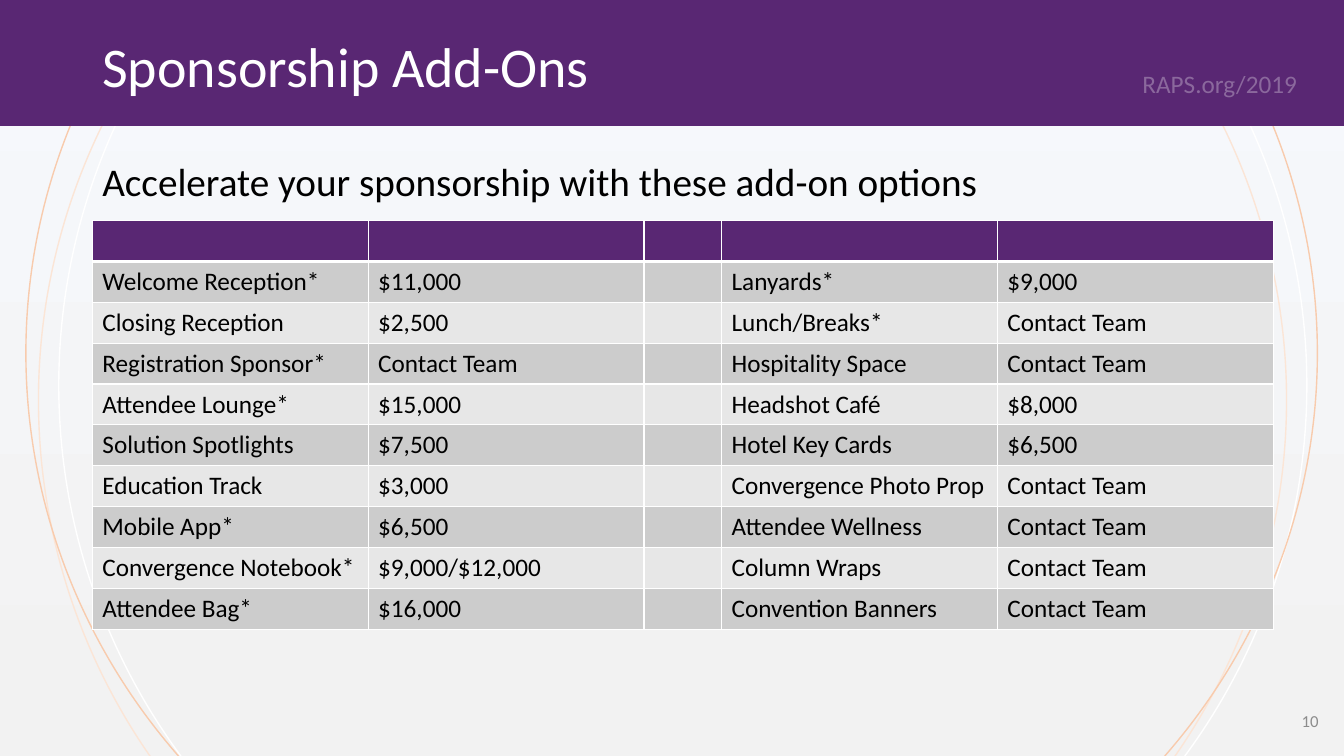
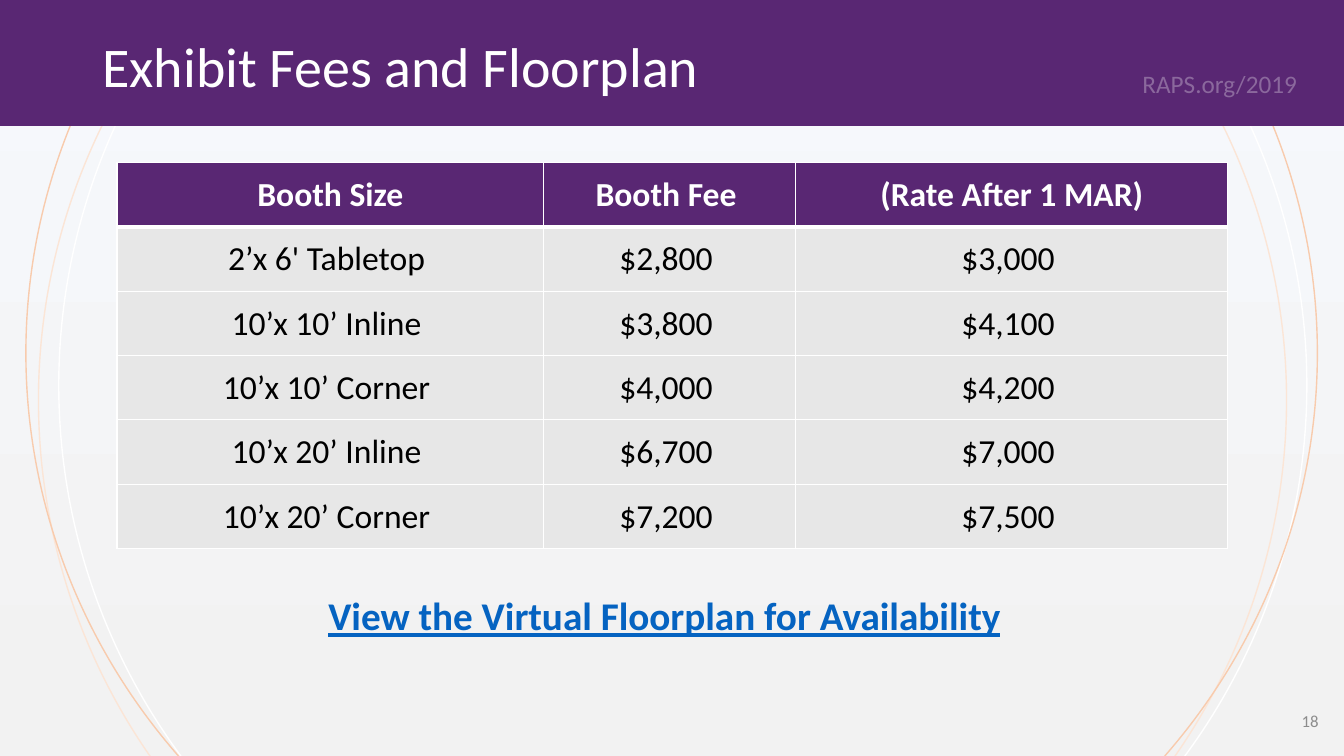
from lxml import etree
from pptx import Presentation
from pptx.dml.color import RGBColor
from pptx.enum import shapes, text
from pptx.oxml import ns
from pptx.util import Pt

FONT = "Calibri"
PURPLE, WHITE, BLACK = "592773", "FFFFFF", "000000"
LIGHT_GRAY, MID_GRAY = "E7E7E7", "CCCCCC"
PAGE_GRAY, LINK_BLUE = "8C8C8C", "0563C1"
SLIDE_WIDTH, SLIDE_HEIGHT, BAND_HEIGHT = 960, 540, 90
LEFT, CENTER, RIGHT = text.PP_ALIGN.LEFT, text.PP_ALIGN.CENTER, text.PP_ALIGN.RIGHT
TOP, MIDDLE = text.MSO_ANCHOR.TOP, text.MSO_ANCHOR.MIDDLE

RINGS = [
    ((42, -170.5, 891.5, 891.5), WHITE),
    ((27.5, -160, 891.5, 891.5), "FBE5D6"),
    ((18.5, -193.5, 922.5, 891.5), "F8CBAD"),
]

ADD_ONS = [
    ("", "", "", "", ""),
    ("Welcome Reception*", "$11,000", "", "Lanyards*", "$9,000"),
    ("Closing Reception", "$2,500", "", "Lunch/Breaks*", "Contact Team"),
    ("Registration Sponsor*", "Contact Team", "", "Hospitality Space", "Contact Team"),
    ("Attendee Lounge*", "$15,000", "", "Headshot Café", "$8,000"),
    ("Solution Spotlights", "$7,500", "", "Hotel Key Cards", "$6,500"),
    ("Education Track", "$3,000", "", "Convergence Photo Prop", "Contact Team"),
    ("Mobile App*", "$6,500", "", "Attendee Wellness", "Contact Team"),
    ("Convergence Notebook*", "$9,000/$12,000", "", "Column Wraps", "Contact Team"),
    ("Attendee Bag*", "$16,000", "", "Convention Banners", "Contact Team"),
]
BOOTH_FEES = [
    ("Booth Size", "Booth Fee ", "(Rate After 1 MAR)"),
    ("2’x 6' Tabletop ", "$2,800 ", "$3,000 "),
    ("10’x 10’ Inline ", "$3,800 ", "$4,100 "),
    ("10’x 10’ Corner ", "$4,000 ", "$4,200 "),
    ("10’x 20’ Inline ", "$6,700 ", "$7,000 "),
    ("10’x 20’ Corner ", "$7,200 ", "$7,500 "),
]

SLIDES = [
    {
        "title": "Sponsorship Add-Ons", "page": "10", "rows": ADD_ONS,
        "origin": (66, 157.5), "columns": (197, 197, 55.5, 197, 197), "row_height": 29.2,
        "bands": (LIGHT_GRAY, MID_GRAY), "size": 18, "align": LEFT, "anchor": TOP,
        "margins": (7.2, 3.6, 7.2, 3.6),
        "message": "Accelerate your sponsorship with these add-on options",
        "message_box": (66, 112.5, 796, 38), "message_color": BLACK,
        "message_align": LEFT, "message_spacing": 0.9, "message_is_link": False,
    },
    {
        "title": "Exhibit Fees and Floorplan", "page": "18", "rows": BOOTH_FEES,
        "origin": (83.5, 116), "columns": (305, 180, 308.5), "row_height": 46,
        "bands": (LIGHT_GRAY, LIGHT_GRAY), "size": 24, "align": CENTER, "anchor": MIDDLE,
        "margins": (0.72, 0.72, 0.72, 0),
        "message": "View the Virtual Floorplan for Availability",
        "message_box": (216.5, 419, 516, 41), "message_color": LINK_BLUE,
        "message_align": CENTER, "message_spacing": 1, "message_is_link": True,
    },
]


def style_text(frame, value, size, color, align, bold=False):
    """Write one paragraph and return its font, or None when it is empty."""
    frame.text = value
    paragraph = frame.paragraphs[0]
    paragraph.alignment = align
    for run in paragraph.runs:
        run.font.name = FONT
        run.font.size = Pt(size)
        run.font.bold = bold
        run.font.color.rgb = RGBColor.from_string(color)
        return run.font


def add_label(slide, box, value, size, color, align=LEFT, anchor=TOP, bold=False, spacing=1):
    frame = slide.shapes.add_textbox(*map(Pt, box)).text_frame
    frame.word_wrap = True
    frame.vertical_anchor = anchor
    font = style_text(frame, value, size, color, align, bold)
    frame.paragraphs[0].line_spacing = spacing
    return font


presentation = Presentation()
presentation.slide_width = Pt(SLIDE_WIDTH)
presentation.slide_height = Pt(SLIDE_HEIGHT)

for content in SLIDES:
    slide = presentation.slides.add_slide(presentation.slide_layouts[6])

    # Shared background, rings and title band
    background = slide.background.fill
    background.gradient()
    background.gradient_angle = 270
    for stop, color in zip(background.gradient_stops, ("F6F8FC", "F2F2F2")):
        stop.color.rgb = RGBColor.from_string(color)

    for box, color in RINGS:
        ring = slide.shapes.add_shape(shapes.MSO_SHAPE.OVAL, *map(Pt, box))
        ring.shadow.inherit = False
        ring.fill.background()
        ring.line.color.rgb = RGBColor.from_string(color)
        ring.line.width = Pt(1)

    band = slide.shapes.add_shape(
        shapes.MSO_SHAPE.RECTANGLE, 0, 0, Pt(SLIDE_WIDTH), Pt(BAND_HEIGHT))
    band.shadow.inherit = False
    band.fill.solid()
    band.fill.fore_color.rgb = RGBColor.from_string(PURPLE)
    band.line.fill.background()

    address_font = add_label(slide, (733.5, 45.5, 200, 29), "RAPS.org/2019", 18, WHITE, RIGHT)
    address_color = address_font.fill._xPr.find(".//" + ns.qn("a:srgbClr"))
    etree.SubElement(address_color, ns.qn("a:alpha"), val="30000")

    add_label(slide, (66, 22.5, 828, 54.5), content["title"], 40, WHITE,
              anchor=MIDDLE, spacing=0.9)
    add_label(slide, (733, 500.5, 216, 29), content["page"], 12, PAGE_GRAY, RIGHT, MIDDLE)

    # Message above or below the table
    message_font = add_label(
        slide, content["message_box"], content["message"], 28, content["message_color"],
        content["message_align"], bold=content["message_is_link"],
        spacing=content["message_spacing"])
    message_font.underline = content["message_is_link"]

    # Price table
    rows, columns = content["rows"], content["columns"]
    table = slide.shapes.add_table(
        len(rows), len(columns), *map(Pt, content["origin"]),
        Pt(sum(columns)), Pt(content["row_height"] * len(rows))).table
    for column, width in zip(table.columns, columns):
        column.width = Pt(width)

    for row_index, values in enumerate(rows):
        table.rows[row_index].height = Pt(content["row_height"])
        is_header = row_index == 0
        fill_color = PURPLE if is_header else content["bands"][row_index % 2]
        border_widths = {
            "lnL": 1, "lnR": 1,
            "lnT": 3 if row_index == 1 else 1,
            "lnB": 3 if is_header else 1,
        }
        for column_index, value in enumerate(values):
            cell = table.cell(row_index, column_index)
            style_text(cell.text_frame, value, content["size"],
                       WHITE if is_header else BLACK, content["align"], is_header)
            cell.vertical_anchor = content["anchor"]
            (cell.margin_left, cell.margin_top,
             cell.margin_right, cell.margin_bottom) = map(Pt, content["margins"])
            properties = cell._tc.get_or_add_tcPr()
            for side, width in border_widths.items():
                border = etree.SubElement(properties, ns.qn("a:" + side), w=str(Pt(width)))
                border_fill = etree.SubElement(border, ns.qn("a:solidFill"))
                etree.SubElement(border_fill, ns.qn("a:srgbClr"), val=WHITE)
            cell.fill.solid()
            cell.fill.fore_color.rgb = RGBColor.from_string(fill_color)

presentation.save("out.pptx")
